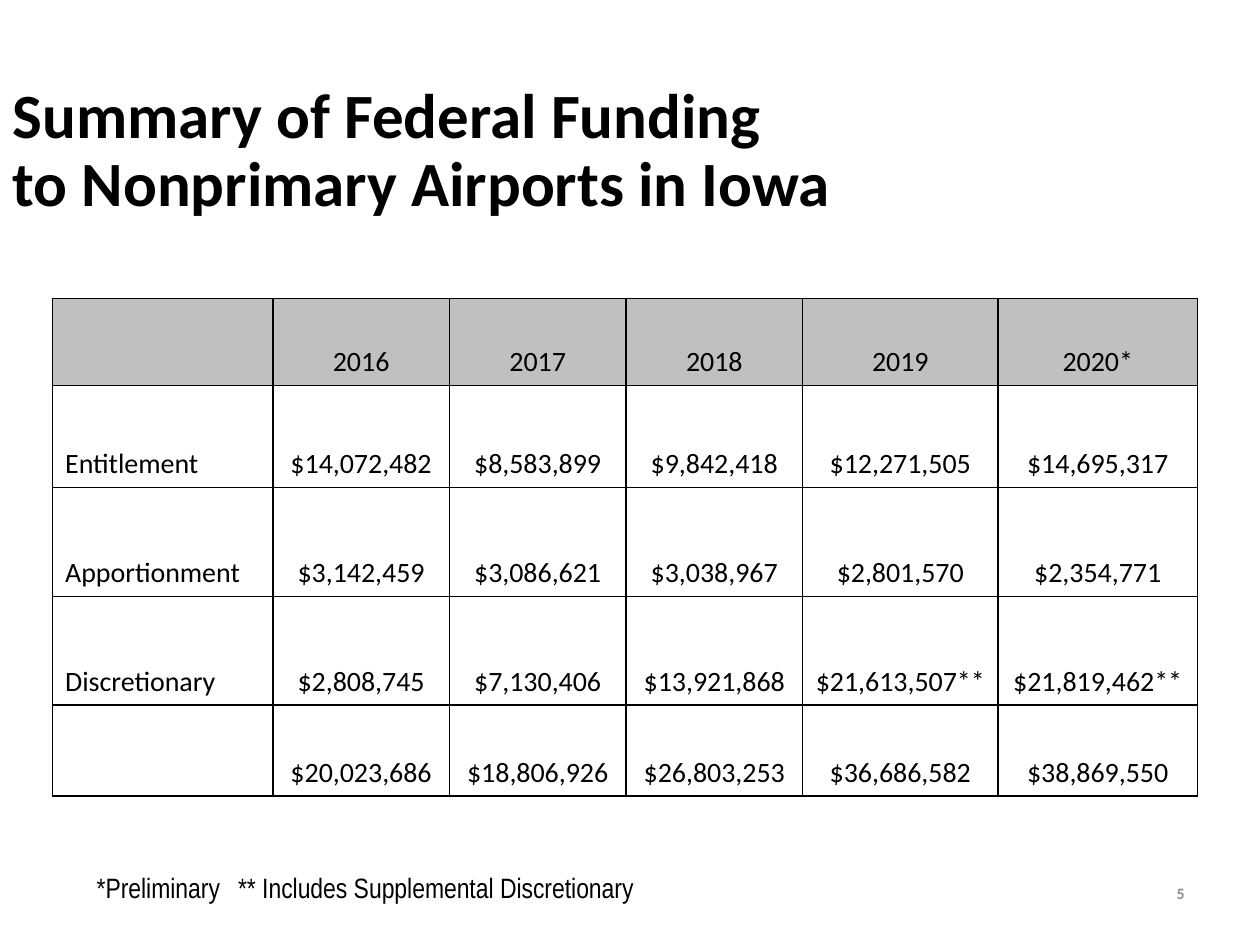
from lxml.etree import SubElement
from pptx import Presentation
from pptx.dml.color import RGBColor
from pptx.enum.text import MSO_ANCHOR, MSO_AUTO_SIZE, PP_ALIGN
from pptx.oxml.ns import qn
from pptx.util import Cm, Pt

BLACK = RGBColor(0x00, 0x00, 0x00)
WHITE = RGBColor(0xFF, 0xFF, 0xFF)
SILVER = RGBColor(0xC0, 0xC0, 0xC0)
GRAY = RGBColor(0x8C, 0x8C, 0x8C)

COL_WIDTHS = [4.44, 3.56, 3.56, 3.56, 3.94, 4.02]
ROW_HEIGHTS = [1.75, 2.06, 2.19, 2.19, 1.84]
ROWS = [
    ["", "2016", "2017", "2018", "2019", "2020*"],
    ["Entitlement", "$14,072,482", "$8,583,899", "$9,842,418", "$12,271,505", "$14,695,317"],
    ["Apportionment", "$3,142,459", "$3,086,621", "$3,038,967", "$2,801,570", "$2,354,771"],
    ["Discretionary", "$2,808,745", "$7,130,406", "$13,921,868", "$21,613,507**", "$21,819,462**"],
    ["", "$20,023,686", "$18,806,926", "$26,803,253", "$36,686,582", "$38,869,550"],
]


def write(tf, text, align, color, **font):
    p = tf.paragraphs[0]
    p.text = text
    p.alignment = align
    for r in p.runs:
        r.font.color.rgb = color
        for name, value in font.items():
            setattr(r.font, name, value)
    return p


def add_borders(cell):
    tcPr = cell._tc.get_or_add_tcPr()
    for side in ("a:lnL", "a:lnR", "a:lnT", "a:lnB"):
        ln = SubElement(tcPr, qn(side), w=str(Pt(1)))
        fill = SubElement(ln, qn("a:solidFill"))
        SubElement(fill, qn("a:srgbClr"), val=str(BLACK))


prs = Presentation()
prs.slide_width, prs.slide_height = Cm(25.4), Cm(19.05)
s = prs.slides.add_slide(prs.slide_layouts[5])

title = s.shapes.title
title.left, title.top, title.width, title.height = Cm(0), Cm(1.47), Cm(24.97), Cm(3.18)
tf = title.text_frame
tf.auto_size = MSO_AUTO_SIZE.NONE
tf.vertical_anchor = MSO_ANCHOR.MIDDLE
p = write(tf, "Summary of Federal Funding\vto Nonprimary Airports in Iowa",
          PP_ALIGN.LEFT, BLACK, name="Calibri", size=Pt(36), bold=True)
p.line_spacing = 0.9

table = s.shapes.add_table(len(ROWS), len(COL_WIDTHS), Cm(1.06), Cm(6.02),
                           Cm(sum(COL_WIDTHS)), Cm(sum(ROW_HEIGHTS))).table
for col, width in zip(table.columns, COL_WIDTHS):
    col.width = Cm(width)
for i, (values, height) in enumerate(zip(ROWS, ROW_HEIGHTS)):
    table.rows[i].height = Cm(height)
    for j, value in enumerate(values):
        cell = table.cell(i, j)
        add_borders(cell)
        cell.fill.solid()
        cell.fill.fore_color.rgb = SILVER if i == 0 else WHITE
        cell.vertical_anchor = MSO_ANCHOR.BOTTOM
        write(cell.text_frame, value, PP_ALIGN.CENTER if j else PP_ALIGN.LEFT,
              BLACK, name="Calibri", size=Pt(16), bold=False)

number = s.shapes.add_textbox(Cm(18.21), Cm(17.35), Cm(5.92), Cm(1.32))
tf = number.text_frame
tf.word_wrap = True
tf.vertical_anchor = MSO_ANCHOR.MIDDLE
write(tf, "5", PP_ALIGN.RIGHT, GRAY, name="Calibri", size=Pt(9), bold=True)

footnote = s.shapes.add_textbox(Cm(1.7), Cm(17.42), Cm(12.5), Cm(1.63))
tf = footnote.text_frame
tf.word_wrap = True
p = write(tf, "*Preliminary\t** Includes Supplemental Discretionary",
          PP_ALIGN.LEFT, BLACK, name="Arial Narrow", size=Pt(16))
tabs = SubElement(p._p.get_or_add_pPr(), qn("a:tabLst"))
SubElement(tabs, qn("a:tab"), pos=str(Cm(2.85)), algn="l")

prs.save("out.pptx")
